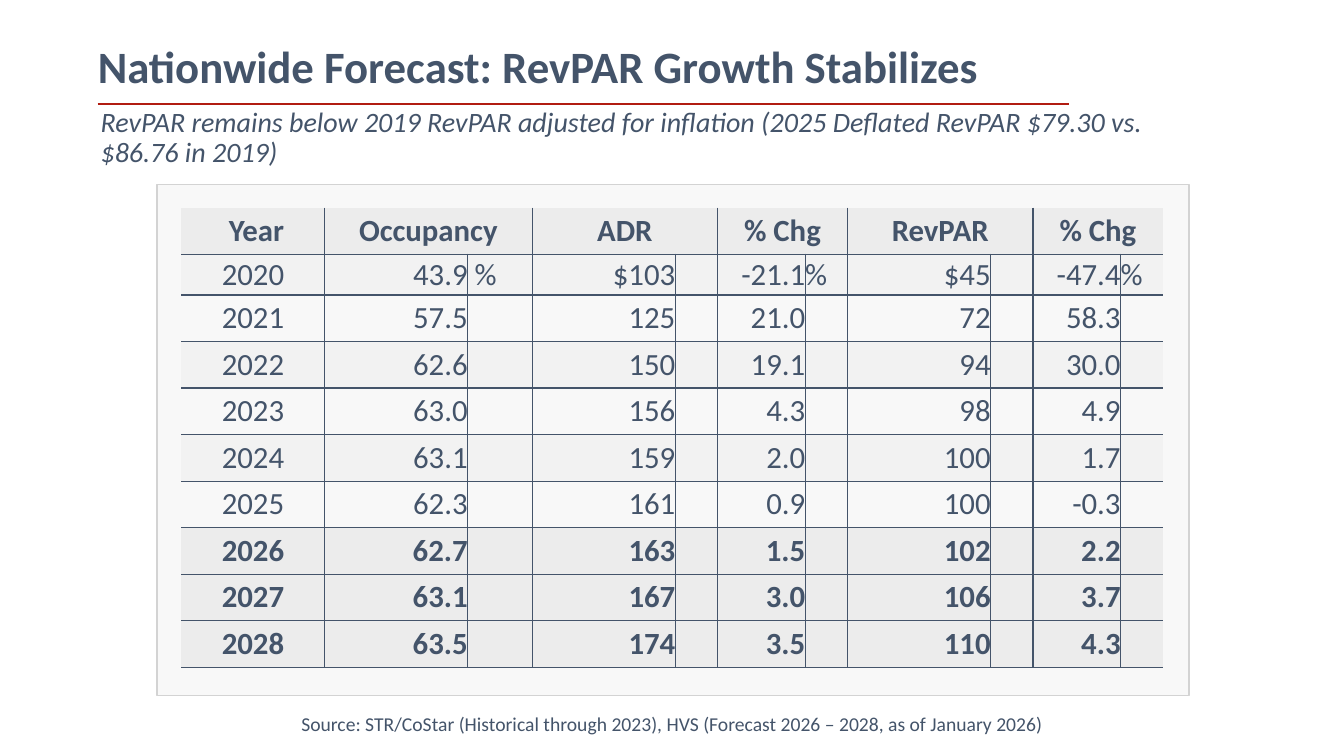
from dataclasses import dataclass, field
from typing import Any

from lxml import etree
from pptx import Presentation
from pptx import util as u
from pptx.dml.color import RGBColor
from pptx.enum import shapes, text
from pptx.oxml import ns


@dataclass(frozen=True)
class Theme:
    font: str = "Calibri"
    ink: str = "44546A"
    rule: str = "B11C11"
    panel: str = "F8F8F8"
    panel_edge: str = "D3D3D3"
    strong: str = "ECECEC"
    band: str = "F2F2F2"
    title: float = 32
    subtitle: float = 20
    table: float = 22
    source: float = 14


@dataclass(frozen=True)
class Box:
    left: float
    top: float
    width: float
    height: float

    def emu(self) -> tuple[u.Length, ...]:
        return u.Pt(self.left), u.Pt(self.top), u.Pt(self.width), u.Pt(self.height)


@dataclass(frozen=True)
class ForecastRow:
    values: tuple[str, ...]
    fill: str | None = None
    bold: bool = False
    units: dict[int, str] = field(default_factory=dict)


THEME = Theme()
ALIGN = text.PP_ALIGN
MIDDLE = text.MSO_ANCHOR.MIDDLE

TITLE_BOX = Box(62.64, 26.64, 702, 45.36)
SUBTITLE_BOX = Box(64.8, 76.32, 784, 45.36)
SOURCE_BOX = Box(184.32, 504.72, 591.84, 24.48)
PANEL_BOX = Box(112.32, 131.76, 737.28, 365.04)
TABLE_BOX = Box(129.6, 148.32, 702, 328.5)
RULE_LEFT, RULE_RIGHT, RULE_TOP = 69.84, 763.92, 74.16

YEAR_WIDTH, WIDE, NARROW, UNIT, PERCENT_UNIT = 102.24, 102.24, 62.64, 30.24, 46.08
COLUMNS = (YEAR_WIDTH, WIDE, PERCENT_UNIT, WIDE, UNIT, NARROW, UNIT, WIDE, UNIT, NARROW, UNIT)
ROW_HEIGHT, FIRST_YEAR_HEIGHT = 33.25, 29.25

HEADINGS = (" Year", "Occupancy", "ADR", "% Chg", "RevPAR", "% Chg")
ROWS = (
    ForecastRow(("2020", "43.9", "$103", "-21.1", "$45", "-47.4"), THEME.band,
                units={2: " %", 6: "%", 10: "%"}),
    ForecastRow(("2021", "57.5", "125", "21.0", "72", "58.3")),
    ForecastRow(("2022", "62.6", "150", "19.1", "94", "30.0"), THEME.band),
    ForecastRow(("2023", "63.0", "156", "4.3", "98", "4.9")),
    ForecastRow(("2024", "63.1", "159", "2.0", "100", "1.7"), THEME.band),
    ForecastRow(("2025", "62.3", "161", "0.9", "100", "-0.3")),
    ForecastRow(("2026", "62.7", "163", "1.5", "102", "2.2"), THEME.strong, True),
    ForecastRow(("2027", "63.1", "167", "3.0", "106", "3.7"), THEME.strong, True),
    ForecastRow(("2028", "63.5", "174", "3.5", "110", "4.3"), THEME.strong, True),
)


def rgb(value: str) -> RGBColor:
    return RGBColor.from_string(value)


def apply(target: Any, formats: dict[str, Any]) -> None:
    for name, value in formats.items():
        setattr(target, name, value)


def write(tf: Any, words: str, size: float, align: Any = ALIGN.LEFT,
          spacing: float = 1.0, bold: bool = False, italic: bool = False) -> None:
    p = tf.paragraphs[0]
    apply(p, {"alignment": align, "line_spacing": spacing, "space_before": u.Pt(0)})
    r = p.add_run()
    r.text = words
    apply(r.font, {"name": THEME.font, "size": u.Pt(size), "bold": bold, "italic": italic})
    r.font.color.rgb = rgb(THEME.ink)


def place(sp: Any, box: Box) -> None:
    apply(sp, dict(zip(("left", "top", "width", "height"), box.emu())))


def add_title(s: Any) -> None:
    sp = s.shapes.title
    place(sp, TITLE_BOX)
    apply(sp.text_frame, {"vertical_anchor": MIDDLE, "word_wrap": True,
                          "auto_size": text.MSO_AUTO_SIZE.NONE})
    write(sp.text_frame, "Nationwide Forecast: RevPAR Growth Stabilizes",
          THEME.title, spacing=0.9, bold=True)


def add_text(s: Any, box: Box, words: str, size: float, anchor: Any, **style: Any) -> None:
    tf = s.shapes.add_textbox(*box.emu()).text_frame
    apply(tf, {"word_wrap": True, "vertical_anchor": anchor})
    write(tf, words, size, **style)


def add_rule(s: Any) -> None:
    sp = s.shapes.add_connector(shapes.MSO_CONNECTOR.STRAIGHT, u.Pt(RULE_LEFT),
                                u.Pt(RULE_TOP), u.Pt(RULE_RIGHT), u.Pt(RULE_TOP))
    sp.line.color.rgb = rgb(THEME.rule)
    sp.line.width = u.Pt(1)
    etree.SubElement(sp._element.spPr, ns.qn("a:effectLst"))


def add_panel(s: Any) -> None:
    sp = s.shapes.add_shape(shapes.MSO_SHAPE.RECTANGLE, *PANEL_BOX.emu())
    sp.shadow.inherit = False
    sp.fill.solid()
    sp.fill.fore_color.rgb = rgb(THEME.panel)
    sp.line.color.rgb = rgb(THEME.panel_edge)
    sp.line.width = u.Pt(1.25)


def add_border(cell: Any, side: str) -> None:
    ln = etree.SubElement(cell._tc.get_or_add_tcPr(), ns.qn(f"a:ln{side}"), w=str(u.Pt(1)))
    fill = etree.SubElement(ln, ns.qn("a:solidFill"))
    etree.SubElement(fill, ns.qn("a:srgbClr"), val=THEME.ink)


def format_cell(cell: Any, row: int, column: int, fill: str | None) -> None:
    apply(cell, {"margin_left": 0, "margin_right": 0, "margin_top": 0, "margin_bottom": 0,
                 "vertical_anchor": MIDDLE})
    sides = {"L": column % 2 == 1, "R": column % 2 == 0 and column < len(COLUMNS) - 1,
             "T": row > 0, "B": True}
    for side, drawn in sides.items():
        if drawn:
            add_border(cell, side)
    if fill:
        cell.fill.solid()
        cell.fill.fore_color.rgb = rgb(fill)
    else:
        cell.fill.background()


def add_forecast(s: Any) -> None:
    frame = s.shapes.add_table(len(ROWS) + 1, len(COLUMNS), *TABLE_BOX.emu())
    table = frame.table
    apply(table, {"first_row": False, "horz_banding": False})
    style = table._tbl.tblPr.find(ns.qn("a:tableStyleId"))
    style.text = "{2D5ABB26-0587-4C30-8999-92F81FD0307C}"
    for column, width in zip(table.columns, COLUMNS):
        column.width = u.Pt(width)
    for index, row in enumerate(table.rows):
        row.height = u.Pt(FIRST_YEAR_HEIGHT if index == 1 else ROW_HEIGHT)

    for row, record in enumerate((ForecastRow(HEADINGS, THEME.strong, True), *ROWS)):
        for column in range(len(COLUMNS)):
            format_cell(table.cell(row, column), row, column, record.fill)
        for index, value in enumerate(record.values):
            column = max(0, 2 * index - 1)
            cell = table.cell(row, column)
            if row == 0 and column > 0:
                cell.merge(table.cell(row, column + 1))
            align = ALIGN.CENTER if row == 0 or column == 0 else ALIGN.RIGHT
            write(cell.text_frame, value, THEME.table, align, bold=record.bold)
        for column, unit in record.units.items():
            write(table.cell(row, column).text_frame, unit, THEME.table)


def main() -> None:
    prs = Presentation()
    apply(prs, {"slide_width": u.Pt(960), "slide_height": u.Pt(540)})
    s = prs.slides.add_slide(prs.slide_layouts[5])
    add_rule(s)
    add_title(s)
    add_text(s, SUBTITLE_BOX, "RevPAR remains below 2019 RevPAR adjusted for inflation "
             "(2025 Deflated RevPAR $79.30 vs. $86.76 in 2019)",
             THEME.subtitle, MIDDLE, spacing=0.9, italic=True)
    add_text(s, SOURCE_BOX, "Source: STR/CoStar (Historical through 2023), HVS "
             "(Forecast 2026 – 2028, as of January 2026)",
             THEME.source, text.MSO_ANCHOR.TOP, align=ALIGN.CENTER)
    add_panel(s)
    add_forecast(s)
    prs.save("out.pptx")


if __name__ == "__main__":
    main()
